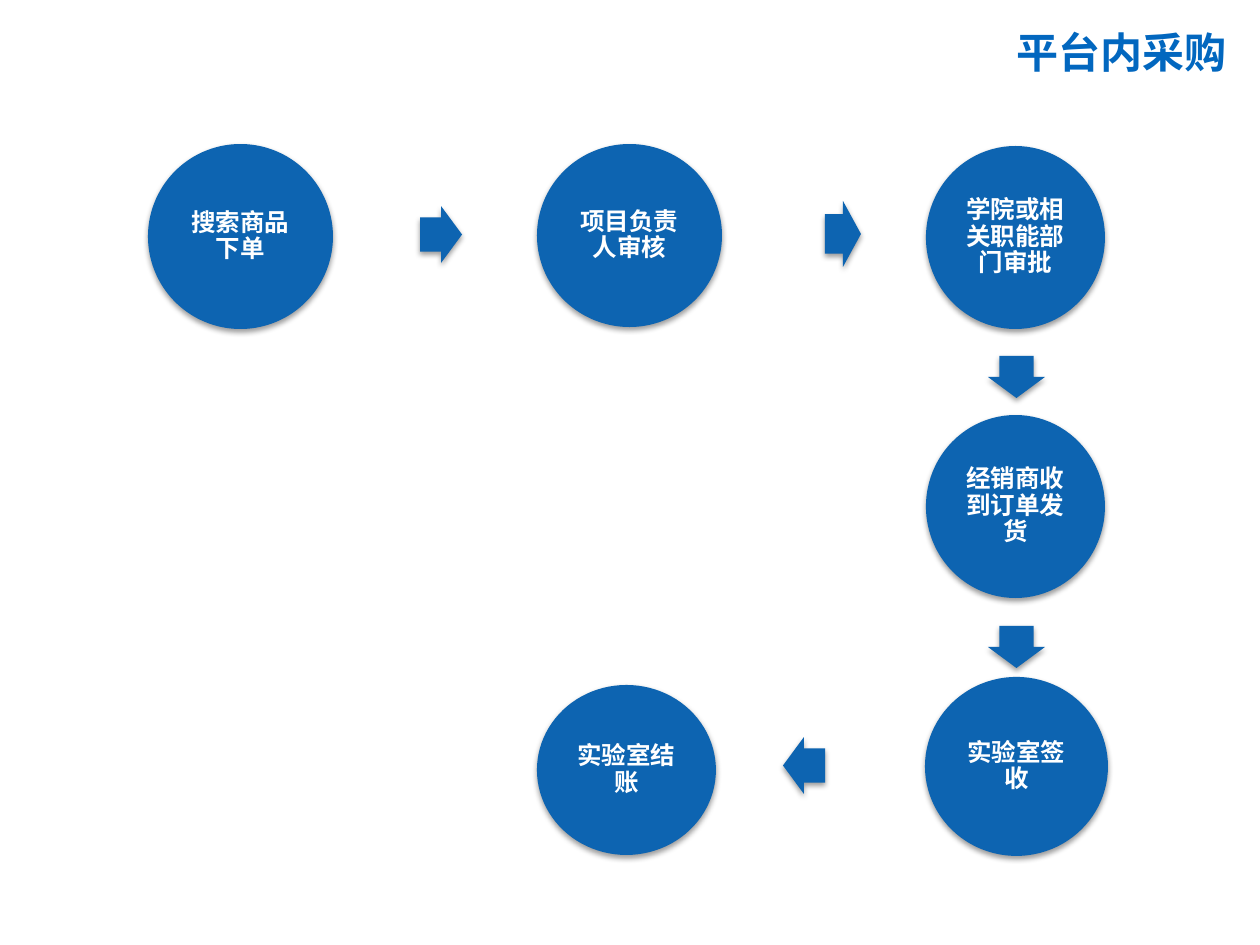
import pptx
import pptx.dml.color
import pptx.enum.shapes
import pptx.enum.text
import pptx.oxml
import pptx.oxml.ns
import pptx.util

SCALE = 914400 // 126  # EMU in one px
FONT = "Noto Sans CJK SC"
BLUE, TITLE_BLUE, WHITE = "0D64B1", "0267BF", "FFFFFF"
SHAPES = pptx.enum.shapes.MSO_SHAPE
ALIGN = pptx.enum.text.PP_ALIGN

TITLE = ("平台内采购", (709, 20, 530, 63))

# Steps in order: text, (left, top, width, height)
STEPS = [
    ("搜索商品下单", (148, 144, 185, 185)),
    ("项目负责人审核", (537, 144, 185, 183)),
    ("学院或相关职能部门审批", (926, 146, 179, 183)),
    ("经销商收到订单发货", (926, 415, 179, 183)),
    ("实验室签收", (925, 677, 183, 179)),
    ("实验室结账", (537, 685, 179, 170)),
]

# Arrows between the steps: direction, (left, top, width, height)
ARROWS = [
    (SHAPES.RIGHT_ARROW, (420, 206, 42, 57)),
    (SHAPES.RIGHT_ARROW, (825, 201, 36, 66)),
    (SHAPES.DOWN_ARROW, (988, 356, 57, 42)),
    (SHAPES.DOWN_ARROW, (988, 626, 57, 42)),
    (SHAPES.LEFT_ARROW, (783, 737, 42, 57)),
]

SHADOW = (
    f'<a:effectLst {pptx.oxml.ns.nsdecls("a")}>'
    '<a:outerShdw blurRad="40000" dist="20000" dir="5400000" rotWithShape="0">'
    '<a:srgbClr val="000000"><a:alpha val="38000"/></a:srgbClr>'
    "</a:outerShdw></a:effectLst>"
)


def px(value):
    return pptx.util.Emu(value * SCALE)


def color(value):
    return pptx.dml.color.RGBColor.from_string(value)


def set_text(shape, text, size, hex_color, alignment):
    shape.text_frame.word_wrap = True
    shape.text_frame.text = text
    paragraph = shape.text_frame.paragraphs[0]
    paragraph.alignment = alignment
    run = paragraph.runs[0]
    run.font.size = pptx.util.Pt(size)
    run.font.bold = True
    run.font.name = FONT
    run.font.color.rgb = color(hex_color)
    # East Asian text takes its font from a:ea
    run_properties = run.font._element
    east_asian = pptx.oxml.parse_xml(
        f'<a:ea {pptx.oxml.ns.nsdecls("a")} typeface="{FONT}"/>')
    run_properties.find(pptx.oxml.ns.qn("a:latin")).addnext(east_asian)
    return paragraph


def add_blue_shape(slide, kind, box):
    shape = slide.shapes.add_shape(kind, *map(px, box))
    shape.fill.solid()
    shape.fill.fore_color.rgb = color(BLUE)
    shape.line.fill.background()
    shape._element.spPr.append(pptx.oxml.parse_xml(SHADOW))
    return shape


def add_step(slide, text, box):
    circle = add_blue_shape(slide, SHAPES.OVAL, box)
    frame = circle.text_frame
    frame.margin_left = frame.margin_right = px(4)
    frame.margin_top = frame.margin_bottom = px(4)
    frame.vertical_anchor = pptx.enum.text.MSO_ANCHOR.MIDDLE
    paragraph = set_text(circle, text, 14, WHITE, ALIGN.CENTER)
    paragraph.line_spacing = 0.9
    paragraph.space_after = pptx.util.Pt(5)


def main():
    presentation = pptx.Presentation()
    presentation.slide_width = pptx.util.Inches(10)
    presentation.slide_height = pptx.util.Inches(7.5)
    slide = presentation.slides.add_slide(presentation.slide_layouts[6])

    # Title
    title_text, title_box = TITLE
    title = slide.shapes.add_textbox(*map(px, title_box))
    set_text(title, title_text, 24, TITLE_BLUE, ALIGN.RIGHT)

    # Process steps
    for text, box in STEPS:
        add_step(slide, text, box)

    # Arrows: shaft 60 % of the breadth, head half of the length
    for kind, box in ARROWS:
        arrow = add_blue_shape(slide, kind, box)
        arrow.adjustments[0] = 0.6
        arrow.adjustments[1] = 0.5

    presentation.save("out.pptx")


if __name__ == "__main__":
    main()
